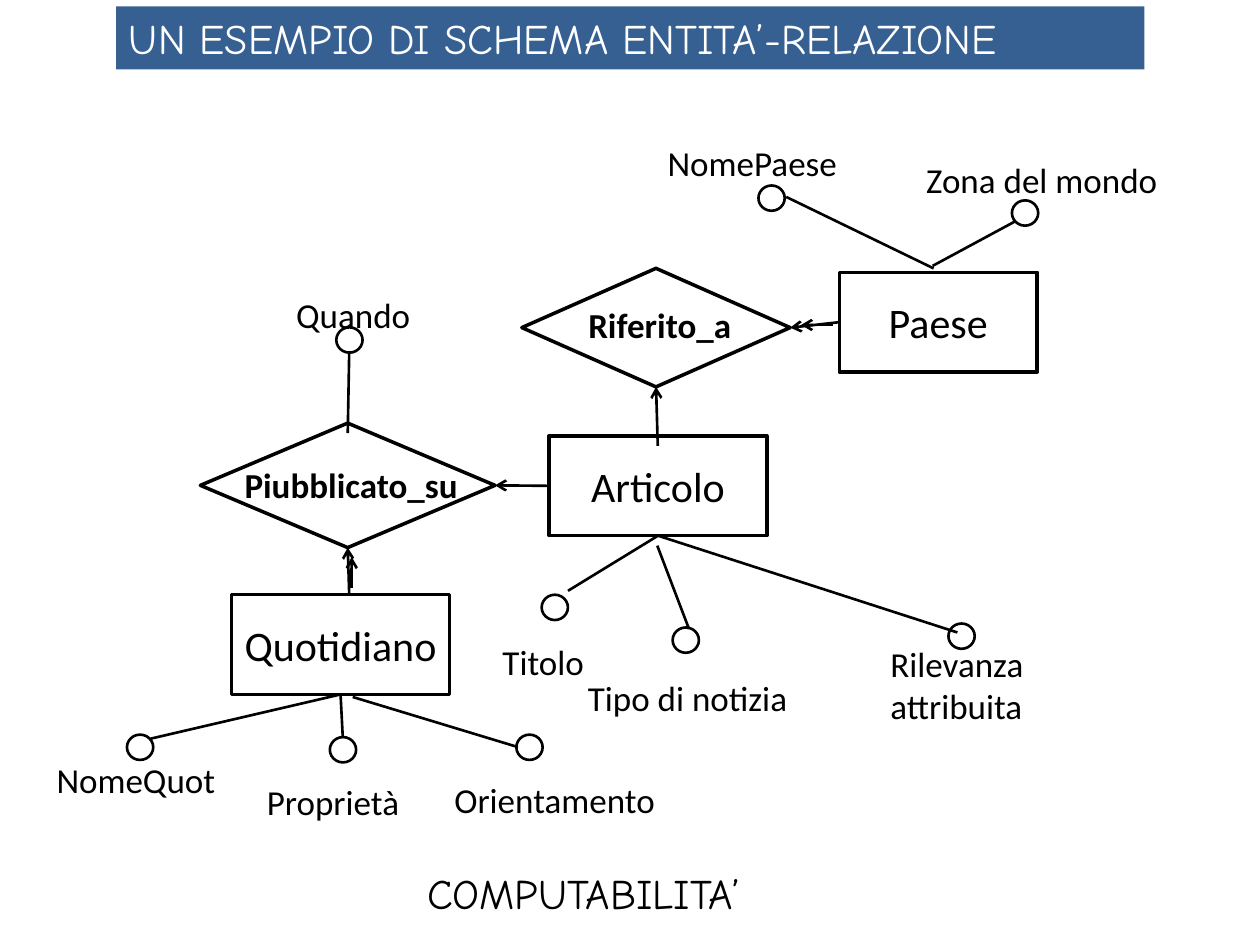
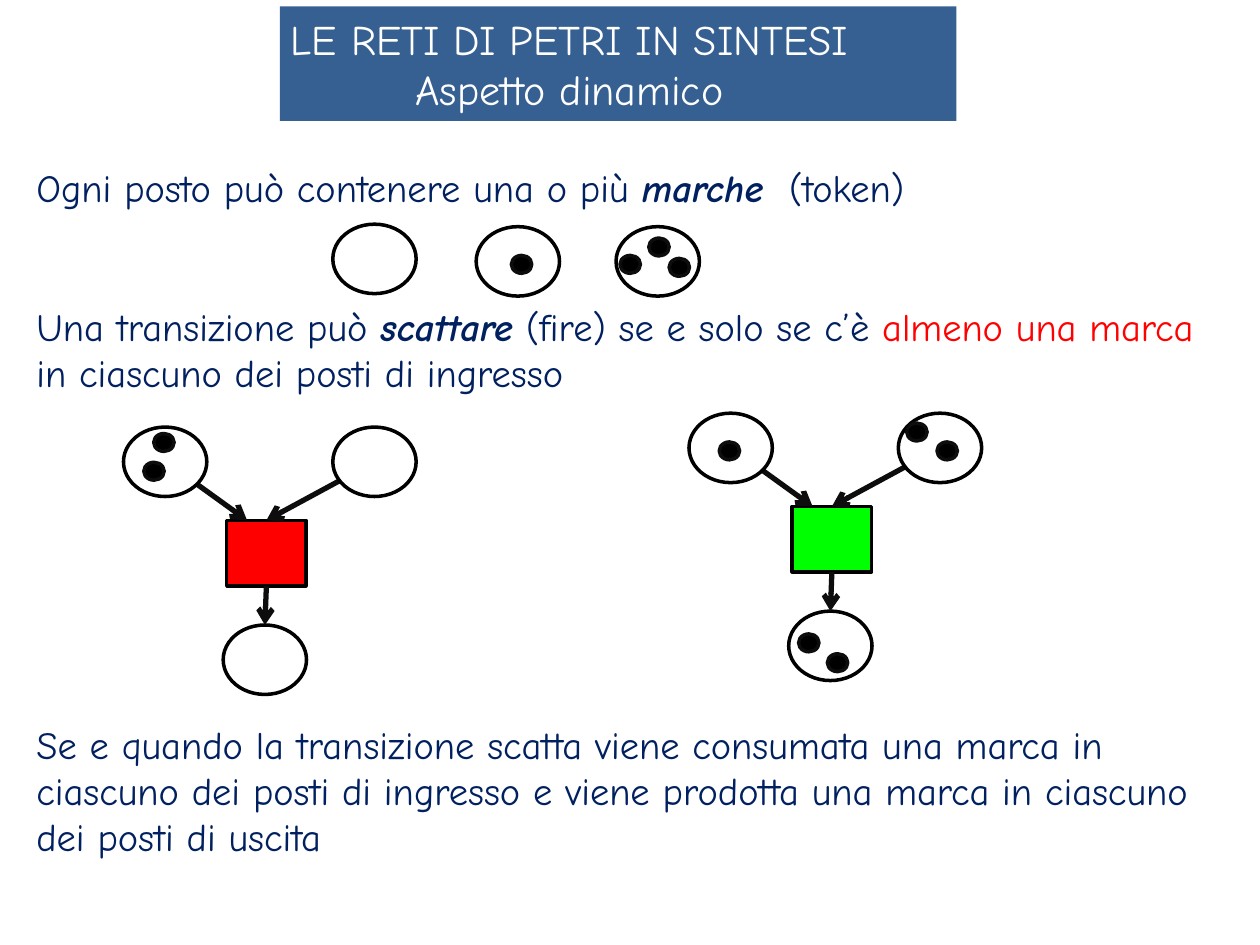
from dataclasses import dataclass

from lxml.etree import SubElement
from pptx import Presentation
from pptx.dml.color import RGBColor
from pptx.enum.shapes import MSO_CONNECTOR as Link, MSO_SHAPE as Kind
from pptx.enum.text import MSO_ANCHOR as Anchor, MSO_AUTO_SIZE as AutoSize, PP_ALIGN as Align
from pptx.oxml.ns import qn
from pptx.util import Cm, Pt

COLOURS = {
    "band": "376092",
    "white": "FFFFFF",
    "black": "000000",
    "ink": "0D0D0D",
    "navy": "002060",
    "red": "FF0000",
    "green": "00FF00",
}
HAND, PLAIN = "Comic Neue", "Calibri"
TOP, LEFT, BOTTOM, RIGHT = range(4)
DOT = (0.53, 0.51)
PLACE = (1.68, 1.4)
TOKEN = (0.41, 0.36)
LABEL_HEIGHT = 1.12


@dataclass
class Attribute:
    """An attribute, measured from its owner's corner; no start means the owner's bottom middle."""
    name: str
    dot: tuple
    label: tuple
    width: float
    end: tuple
    start: tuple = None


def colour(name):
    """Return the named colour."""
    return RGBColor.from_string(COLOURS[name])


def shift(origin, offset):
    """Return the point that lies at an offset from the origin."""
    return origin[0] + offset[0], origin[1] + offset[1]


def add_span(para, text, size=20, font=PLAIN, ink="black", bold=False, italic=False):
    """Append formatted text to a paragraph."""
    span = para.add_run()
    span.text = text
    span.font.size = Pt(size)
    span.font.name = font
    span.font.color.rgb = colour(ink)
    span.font.bold = bold
    span.font.italic = italic


def write(box, text, align=Align.LEFT, anchor=Anchor.TOP, wrap=False, **style):
    """Fill a box with text, one paragraph per line."""
    frame = box.text_frame
    frame.auto_size = AutoSize.NONE
    frame.word_wrap = wrap
    frame.vertical_anchor = anchor
    for number, line in enumerate(text.split("\n")):
        para = frame.add_paragraph() if number else frame.paragraphs[0]
        para.alignment = align
        add_span(para, line, **style)


def put(box, corner, size):
    """Place a box at a corner with a size, both in centimetres."""
    box.left, box.top = map(Cm, corner)
    box.width, box.height = map(Cm, size)


def add_label(page, corner, width, text, height=LABEL_HEIGHT, **style):
    """Add a line of free text."""
    box = page.shapes.add_textbox(*map(Cm, (*corner, width, height)))
    write(box, text, **style)


def draw(page, kind, corner, size, fill=None, line="black", weight=2):
    """Add an outlined preset shape."""
    shape = page.shapes.add_shape(kind, *map(Cm, (*corner, *size)))
    shape.shadow.inherit = False
    if fill:
        shape.fill.solid()
        shape.fill.fore_color.rgb = colour(fill)
    else:
        shape.fill.background()
    shape.line.color.rgb = colour(line)
    shape.line.width = Pt(weight)
    return shape


def connect(page, start, end, arrow=False, line="black", weight=1.5):
    """Draw a line between two ends, each a point or a shape with its side."""
    loose = [point if isinstance(point[0], (int, float)) else (0, 0) for point in (start, end)]
    wire = page.shapes.add_connector(Link.STRAIGHT, *map(Cm, (*loose[0], *loose[1])))
    for point, join in ((start, wire.begin_connect), (end, wire.end_connect)):
        if not isinstance(point[0], (int, float)):
            join(*point)
    wire.line.color.rgb = colour(line)
    wire.line.width = Pt(weight)
    if arrow:
        SubElement(wire.line._get_or_add_ln(), qn("a:tailEnd"), type="arrow")
    SubElement(wire._element.spPr, qn("a:effectLst"))


def set_title(page, text, corner, size, right_margin):
    """Turn the title placeholder into the blue band."""
    title = page.shapes.title
    put(title, corner, size)
    title.fill.solid()
    title.fill.fore_color.rgb = colour("band")
    frame = title.text_frame
    frame.margin_left, frame.margin_right = Cm(0), Cm(right_margin)
    frame.margin_top = frame.margin_bottom = Cm(0.13)
    write(title, text, align=Align.CENTER, anchor=Anchor.MIDDLE, wrap=True,
          size=24, font=HAND, ink="white")


def draw_attributes(page, owner, corner, attributes):
    """Draw the attributes of an entity or relation around it."""
    for item in attributes:
        add_label(page, shift(corner, item.label), item.width, item.name)
        start = shift(corner, item.start) if item.start else (owner, BOTTOM)
        connect(page, start, shift(corner, item.end))
        draw(page, Kind.OVAL, shift(corner, item.dot), DOT, weight=1.5)


def draw_entity(page, name, corner, width, attributes):
    """Draw an entity rectangle with its attributes."""
    entity = draw(page, Kind.RECTANGLE, corner, (width, 2.01), fill="white")
    write(entity, name, align=Align.CENTER, anchor=Anchor.MIDDLE, size=24)
    draw_attributes(page, entity, corner, attributes)
    return entity


def draw_relation(page, name, corner, size, label, width, attributes=()):
    """Draw a relation diamond with its name and attributes."""
    relation = draw(page, Kind.FLOWCHART_DECISION, corner, size, fill="white")
    add_label(page, shift(corner, label), width, name, bold=True)
    draw_attributes(page, relation, corner, attributes)
    return relation


def build_schema(deck):
    """Build the entity-relation slide."""
    page = deck.slides.add_slide(deck.slide_layouts[5])
    set_title(page, "UN ESEMPIO DI SCHEMA ENTITA’-RELAZIONE", (2.34, 0.13), (20.73, 1.27), 2.72)
    country = draw_entity(page, "Paese", (16.92, 5.49), 3.99, [
        Attribute("Zona del mondo", (3.48, -1.45), (1.5, -2.41), 5.21, (3.53, -1.02), (1.88, -0.13)),
        Attribute("NomePaese", (-1.63, -1.75), (-3.71, -2.77), 3.96, (-1.07, -1.52), (1.9, -0.08)),
    ])
    draw_entity(page, "Quotidiano", (4.67, 11.99), 4.39, [
        Attribute("NomeQuot", (-2.11, 2.82), (-3.78, 3.17), 3.73, (-1.63, 2.9)),
        Attribute("Proprietà", (1.98, 2.87), (0.46, 3.61), 3.2, (2.24, 2.87)),
        Attribute("Orientamento", (5.74, 2.82), (4.24, 3.58), 4.6, (5.77, 3.07), (2.44, 2.06)),
    ])
    article = draw_entity(page, "Articolo", (11.07, 8.79), 4.39, [
        Attribute("Titolo", (-0.15, 3.2), (-1.19, 3.99), 2.16, (0.38, 3.12)),
        Attribute("Tipo di notizia", (2.49, 3.86), (0.53, 4.72), 4.57, (2.82, 3.89), (2.18, 2.21)),
        Attribute("Rilevanza\nattribuita", (8.05, 3.78), (6.63, 4.04), 3.23, (8.23, 3.96)),
    ])
    published = draw_relation(page, "Piubblicato_su", (4.04, 8.53), (5.94, 2.51), (0.64, 0.69), 4.85, [
        Attribute("Quando", (2.74, -1.93), (1.68, -2.74), 2.84, (3, -1.45), (2.97, 0.2)),
    ])
    referred = draw_relation(page, "Riferito_a", (10.52, 5.41), (5.41, 2.39), (1.09, 0.58), 3.43)
    for start, end in (
        ((country, LEFT), (referred, RIGHT)),
        ((16.79, 6.55), (16.15, 6.55)),
        ((13.26, 8.99), (referred, BOTTOM)),
        ((article, LEFT), (published, RIGHT)),
        ((7.04, 11.99), (published, BOTTOM)),
        ((7.09, 11.86), (7.09, 11.23)),
    ):
        connect(page, start, end, arrow=True)
    add_label(page, (8.36, 17.37), 8.05, "COMPUTABILITA’", height=1.27, size=24, font=HAND)


def draw_tokens(page, corner, tokens):
    """Draw tokens at offsets from a corner."""
    for offset in tokens:
        draw(page, Kind.OVAL, shift(corner, offset), TOKEN, fill="black", line="ink")


def draw_place(page, corner, tokens=()):
    """Draw a place with the tokens it holds."""
    place = draw(page, Kind.OVAL, corner, PLACE, fill="white")
    draw_tokens(page, corner, tokens)
    return place


def draw_net(page, corner, fill, tokens):
    """Draw two input places, a transition and an output place."""
    transition = draw(page, Kind.RECTANGLE, shift(corner, (2.08, 1.88)), (1.6, 1.32), fill=fill)
    output = draw_place(page, shift(corner, (2.01, 3.99)))
    for start, end in (
        (shift(corner, (0.84, 0.69)), shift(corner, (2.49, 1.88))),
        (shift(corner, (5.08, 0.69)), (transition, TOP)),
        ((transition, BOTTOM), (output, TOP)),
    ):
        connect(page, start, end, arrow=True, line="ink", weight=3)
    for left in (0, 4.22):
        draw_place(page, shift(corner, (left, 0)))
    draw_tokens(page, corner, tokens)


def fill_body(body, corner, size, paragraphs):
    """Place the body and fill it with unbulleted paragraphs."""
    put(body, corner, size)
    body.fill.solid()
    body.fill.fore_color.rgb = colour("white")
    frame = body.text_frame
    frame.auto_size = AutoSize.NONE
    frame.word_wrap = True
    for number, (gap, spans) in enumerate(paragraphs):
        para = frame.add_paragraph() if number else frame.paragraphs[0]
        para.space_before = Pt(gap)
        settings = para._p.get_or_add_pPr()
        settings.set("marL", "0")
        settings.set("indent", "0")
        SubElement(settings, qn("a:buNone"))
        for text, style in spans:
            add_span(para, text, **{"size": 22, "font": HAND, "ink": "navy", **style})


def build_petri(deck):
    """Build the Petri net slide."""
    page = deck.slides.add_slide(deck.slide_layouts[1])
    set_title(page, "LE RETI DI PETRI IN SINTESI\nAspetto dinamico", (5.64, 0.13), (13.64, 2.31), 1.96)
    strong = {"bold": True, "italic": True}
    fill_body(page.placeholders[1], (0.48, 3.18), (23.93, 14.35), [
        (0, [("Ogni posto può contenere una o più ", {}), ("marche", strong), ("  (token)", {})]),
        (53, [("Una transizione può ", {}), ("scattare", strong),
              (" (fire) se e solo se c’è ", {}), ("almeno una marca ", {"ink": "red"}),
              ("in ciascuno dei posti di ingresso", {})]),
        (186, [("Se e quando la transizione scatta viene consumata una marca in ciascuno dei posti "
                "di ingresso e viene prodotta una marca in ciascuno dei posti di uscita", {})]),
    ])
    draw_place(page, (6.71, 4.52))
    draw_place(page, (9.6, 4.57), [(0.71, 0.58)])
    draw_place(page, (12.42, 4.57), [(0.66, 0.23), (1.07, 0.64), (0.08, 0.58)])
    draw_net(page, (2.49, 8.61), "red", [(0.61, 0.13), (0.41, 0.71)])
    draw_net(page, (13.89, 8.33), "green",
             [(0.61, 0.58), (4.39, 0.2), (5, 0.58), (2.21, 4.45), (2.79, 4.85)])


def main():
    """Build both slides and save the deck."""
    deck = Presentation()
    deck.slide_width, deck.slide_height = Cm(25.4), Cm(19.05)
    build_schema(deck)
    build_petri(deck)
    deck.save("out.pptx")


if __name__ == "__main__":
    main()
